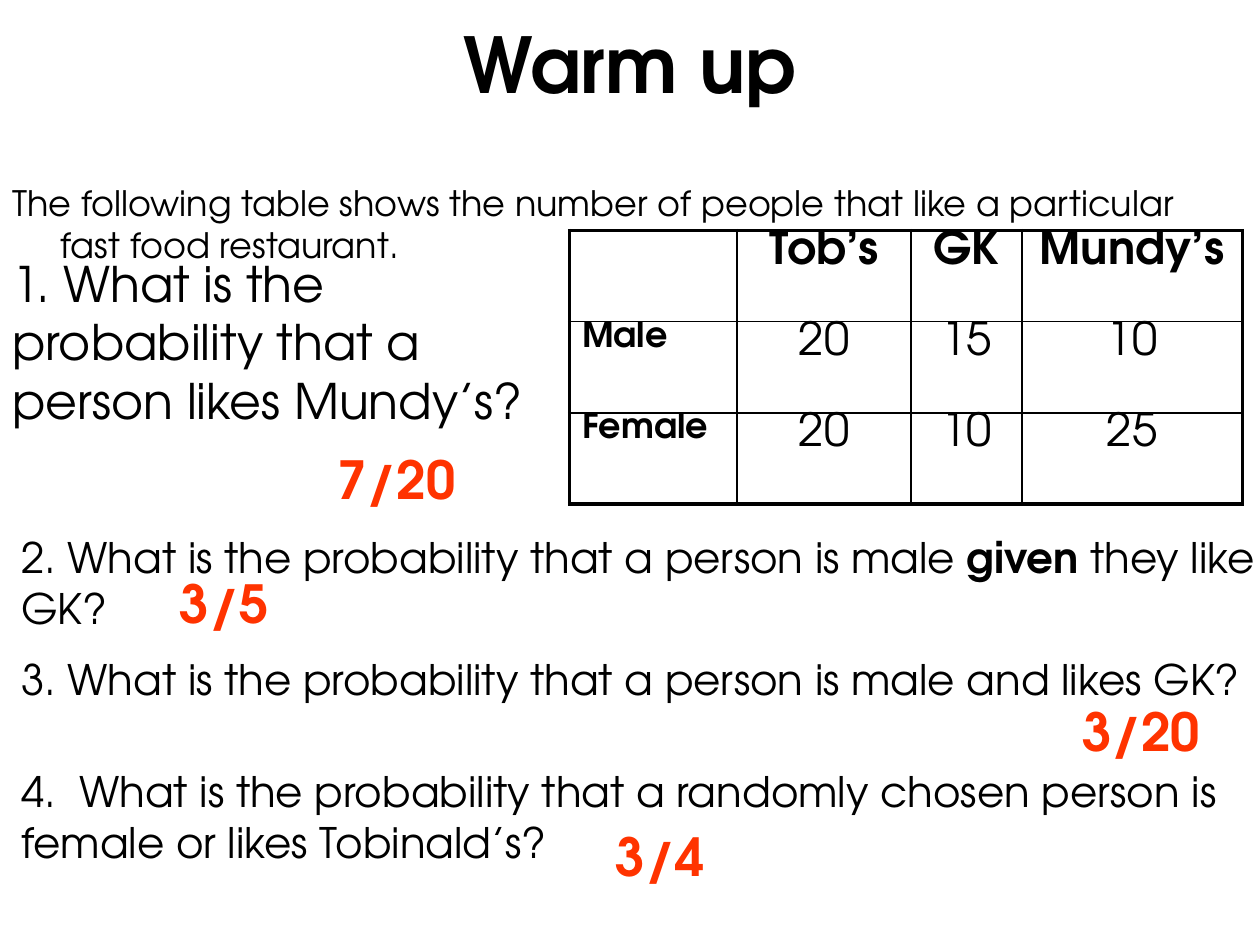
import pptx
import pptx.chart.data
import pptx.dml.color
import pptx.enum.text
import pptx.oxml
import pptx.oxml.ns
import pptx.util
from lxml import etree

Inches = pptx.util.Inches
Pt = pptx.util.Pt
ALIGN = pptx.enum.text.PP_ALIGN
ANCHOR = pptx.enum.text.MSO_ANCHOR
FONT = "TeX Gyre Adventor"
BLACK = "000000"
RED = "FF3300"


def color(value):
    return pptx.dml.color.RGBColor.from_string(value)


def style(para, size, bold=False, ink=BLACK, align=ALIGN.LEFT):
    para.alignment = align
    para.font.name = FONT
    para.font.size = Pt(size)
    para.font.bold = bold
    para.font.color.rgb = color(ink)


def add_text(page, box, text, size, bold=False, ink=BLACK, align=ALIGN.LEFT, anchor=ANCHOR.TOP):
    shape = page.shapes.add_textbox(*map(Inches, box))
    frame = shape.text_frame
    frame.word_wrap = True
    frame.vertical_anchor = anchor
    para = frame.paragraphs[0]
    para.text = text
    style(para, size, bold, ink, align)
    return para


def add_intro(page, box):
    para = add_text(
        page, box,
        "The following table shows the number of people that like a particular fast food restaurant.",
        20,
    )
    properties = para._p.get_or_add_pPr()
    properties.set("marL", str(Inches(0.38)))
    properties.set("indent", str(Inches(-0.38)))


def add_questions(page, box):
    frame = page.shapes.add_textbox(*map(Inches, box)).text_frame
    frame.word_wrap = True
    questions = [
        (0, ["2. What is the probability that a person is male ", "given", " they like GK?"]),
        (12, ["3. What is the probability that a person is male and likes GK?"]),
        (35.5, ["4.  What is the probability that a randomly chosen person is female or likes Tobinald’s?"]),
    ]
    for index, (space, parts) in enumerate(questions):
        para = frame.add_paragraph() if index else frame.paragraphs[0]
        style(para, 24)
        para.space_before = Pt(space)
        for part in parts:
            span = para.add_run()
            span.text = part
            if part == "given":
                span.font.bold = True


def add_border(cell, side, width):
    properties = cell._tc.get_or_add_tcPr()
    line = etree.SubElement(properties, pptx.oxml.ns.qn("a:" + side), w=str(Pt(width)))
    fill = etree.SubElement(line, pptx.oxml.ns.qn("a:solidFill"))
    etree.SubElement(fill, pptx.oxml.ns.qn("a:srgbClr"), val=BLACK)


def add_survey_table(page, box):
    rows = [
        ["", "Tob’s", "GK", "Mundy’s"],
        ["Male", "20", "15", "10"],
        ["Female", "20", "10", "25"],
    ]
    last_row, last_column = len(rows) - 1, len(rows[0]) - 1
    table = page.shapes.add_table(len(rows), len(rows[0]), *map(Inches, box)).table
    table.first_row = False
    table.horz_banding = False
    for column, width in zip(table.columns, [1.33, 1.38, 0.88, 1.75]):
        column.width = Inches(width)
    for r, values in enumerate(rows):
        for c, value in enumerate(values):
            cell = table.cell(r, c)
            cell.margin_top = cell.margin_bottom = 0
            para = cell.text_frame.paragraphs[0]
            para.text = value
            style(
                para, 26 if c else 20, bold=r == 0 or c == 0,
                align=ALIGN.CENTER if c else ALIGN.LEFT,
            )
            outer = {"lnL": c == 0, "lnR": c == last_column, "lnT": r == 0, "lnB": r == last_row}
            for side, is_outer in outer.items():
                add_border(cell, side, 2.25 if is_outer else 1)
            cell.fill.background()


def add_answers(page, answers):
    for text, box in answers:
        add_text(page, box, text, 30, bold=True, ink=RED)


def main():
    deck = pptx.Presentation()
    deck.slide_width, deck.slide_height = Inches(10), Inches(7.5)
    page = deck.slides.add_slide(deck.slide_layouts[6])
    add_text(page, (0.75, 0, 8.5, 1), "Warm up", 44, bold=True, align=ALIGN.CENTER, anchor=ANCHOR.MIDDLE)
    add_intro(page, (0, 1.39, 9.58, 0.77))
    add_text(
        page, (0, 1.96, 4.44, 1.51),
        "1. What is the probability that a person likes Mundy’s?", 28,
    )
    add_survey_table(page, (4.52, 1.83, 5.34, 2.17))
    add_questions(page, (0.07, 4.17, 10, 2.98))
    add_answers(page, [
        ("7/20", (2.58, 3.5, 1.17, 0.6)),
        ("3/5", (1.33, 4.48, 1.16, 0.6)),
        ("3/20", (8.49, 5.5, 1.33, 0.6)),
        ("3/4", (4.79, 6.49, 1.58, 0.6)),
    ])
    deck.save("out.pptx")


if __name__ == "__main__":
    main()
